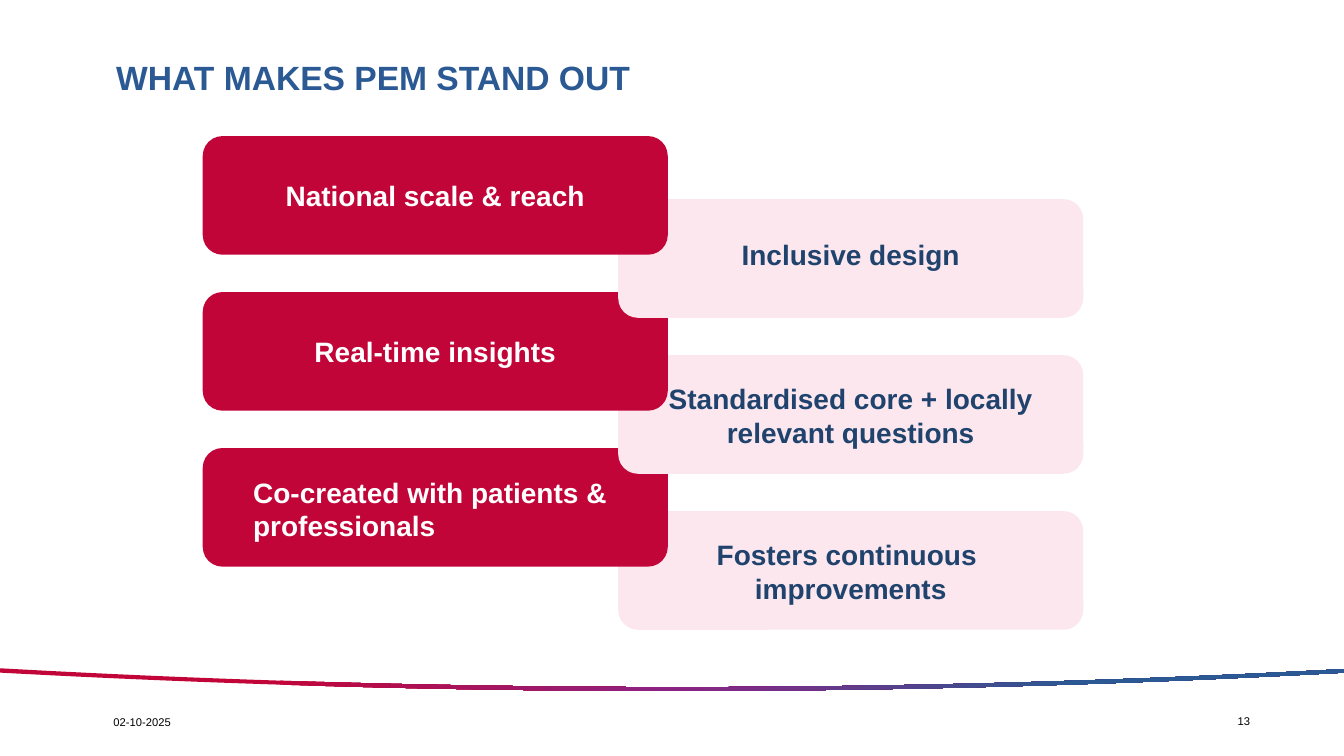
from copy import deepcopy
from dataclasses import dataclass

from pptx import Presentation
from pptx.dml.color import RGBColor
from pptx.enum import shapes, text
from pptx.oxml import ns, xmlchemy
from pptx.util import Cm, Pt


@dataclass(frozen=True)
class Theme:
    font: str = "Arial"
    red: RGBColor = RGBColor(0xC1, 0x05, 0x38)
    purple: RGBColor = RGBColor(0x8C, 0x23, 0x83)
    blue: RGBColor = RGBColor(0x2B, 0x59, 0x93)
    navy: RGBColor = RGBColor(0x20, 0x43, 0x6E)
    pink: RGBColor = RGBColor(0xFB, 0xE7, 0xED)
    white: RGBColor = RGBColor(0xFF, 0xFF, 0xFF)
    black: RGBColor = RGBColor(0x00, 0x00, 0x00)
    title_size: int = 24
    card_size: int = 20
    footer_size: int = 8


THEME = Theme()
SLIDE_W, SLIDE_H = 33.87, 19.05
CARD_W, CARD_H, CARD_STEP = 11.72, 2.99, 3.93
LEFT_X, LEFT_Y = 5.11, 3.43
RIGHT_X, RIGHT_Y = 15.58, 5.02

# Label and its top edge
LEFT_LABELS = [
    ("National scale & reach", 4.5),
    ("Real-time insights", 8.42),
    ("Co-created with patients & professionals", 11.97),
]
RIGHT_LABELS = [
    ("Inclusive design", 5.99),
    ("Standardised core + locally relevant questions", 9.62),
    ("Fosters continuous \nimprovements", 13.55),
]


def write(tf, words, size, color, bold=False, align=None):
    tf.word_wrap = True
    tf.text = words
    for p in tf.paragraphs:
        p.alignment = align
        p.font.name = THEME.font
        p.font.size = Pt(size)
        p.font.bold = bold
        p.font.color.rgb = color


def add_textbox(slide, x, y, width, height):
    s = slide.shapes.add_textbox(Cm(x), Cm(y), Cm(width), Cm(height))
    return s.text_frame


def clear_margins(tf):
    tf.margin_left = tf.margin_top = tf.margin_right = tf.margin_bottom = 0


def add_title(slide, words):
    tf = add_textbox(slide, 2.93, 1.01, 29, 2)
    clear_margins(tf)
    tf.vertical_anchor = text.MSO_ANCHOR.MIDDLE
    write(tf, words, THEME.title_size, THEME.blue, bold=True)
    tf.paragraphs[0].line_spacing = 0.9


def add_footer(slide, words, x, y, width):
    tf = add_textbox(slide, x, y, width, 0.61)
    write(tf, words, THEME.footer_size, THEME.black)


def add_card(slide, x, y, fill):
    s = slide.shapes.add_shape(shapes.MSO_SHAPE.ROUNDED_RECTANGLE,
                               Cm(x), Cm(y), Cm(CARD_W), Cm(CARD_H))
    s.shadow.inherit = False
    s.fill.solid()
    s.fill.fore_color.rgb = fill
    s.line.fill.background()


def add_label(slide, words, x, y, height, color,
              align=text.PP_ALIGN.CENTER):
    tf = add_textbox(slide, x, y, CARD_W, height)
    clear_margins(tf)
    write(tf, words, THEME.card_size, color, bold=True, align=align)
    tf.auto_size = text.MSO_AUTO_SIZE.SHAPE_TO_FIT_TEXT
    return tf.paragraphs[0]


def add_cards(slide):
    """Stack the rows from the bottom up, so that upper cards overlap lower."""
    for row in reversed(range(len(LEFT_LABELS))):
        offset = row * CARD_STEP
        add_card(slide, RIGHT_X, RIGHT_Y + offset, THEME.pink)
        add_card(slide, LEFT_X, LEFT_Y + offset, THEME.red)


def add_labels(slide):
    one_line, two_lines = 0.85, 1.71
    for words, y in LEFT_LABELS[:-1]:
        add_label(slide, words, LEFT_X, y, one_line, THEME.white)
    words, y = LEFT_LABELS[-1]
    p = add_label(slide, words, LEFT_X, y, two_lines, THEME.white, align=None)
    p.level = 1
    p_pr = p._p.get_or_add_pPr()
    p_pr.set("marL", str(Cm(1.27)))
    p_pr.set("indent", "0")
    heights = [one_line, two_lines, two_lines]
    for (words, y), height in zip(RIGHT_LABELS, heights):
        add_label(slide, words, RIGHT_X, y, height, THEME.navy)


def curve_lines(path, first):
    """Turn three line segments, from index first, into one cubic curve."""
    segments = path.findall(ns.qn("a:lnTo"))[first:first + 3]
    curve = xmlchemy.OxmlElement("a:cubicBezTo")
    segments[0].addprevious(curve)
    for segment in segments:
        curve.append(segment[0])
        path.remove(segment)


def add_wave(slide):
    """Draw the thin curved band across the foot of the slide."""
    lower = [(0, 16.95), (11.29, 17.56), (22.58, 17.57), (SLIDE_W, 16.95)]
    upper = [(SLIDE_W, 16.86), (22.58, 17.47), (11.29, 17.47), (0, 16.84)]
    points = [(Cm(x), Cm(y)) for x, y in lower + upper]
    builder = slide.shapes.build_freeform(*points[0])
    builder.add_line_segments(points[1:], close=True)
    s = builder.convert_to_shape()
    path = s._element.spPr.find(".//" + ns.qn("a:path"))
    curve_lines(path, 4)
    curve_lines(path, 0)
    s.shadow.inherit = False
    s.line.fill.background()
    s.fill.gradient()
    s.fill.gradient_angle = 0
    stop_list = s._element.spPr.find(".//" + ns.qn("a:gsLst"))
    stop_list.insert(1, deepcopy(stop_list[0]))
    colors = [(0.2, THEME.red), (0.5, THEME.purple), (0.8, THEME.blue)]
    for stop, (position, color) in zip(s.fill.gradient_stops, colors):
        stop.position = position
        stop.color.rgb = color


def main():
    prs = Presentation()
    prs.slide_width, prs.slide_height = Cm(SLIDE_W), Cm(SLIDE_H)
    slide = prs.slides.add_slide(prs.slide_layouts[6])
    add_wave(slide)
    add_title(slide, "WHAT MAKES PEM STAND OUT")
    add_footer(slide, "02-10-2025", 2.61, 17.91, 5)
    add_footer(slide, "13", 30.94, 17.88, 1.45)
    add_cards(slide)
    add_labels(slide)
    prs.save("out.pptx")


if __name__ == "__main__":
    main()
